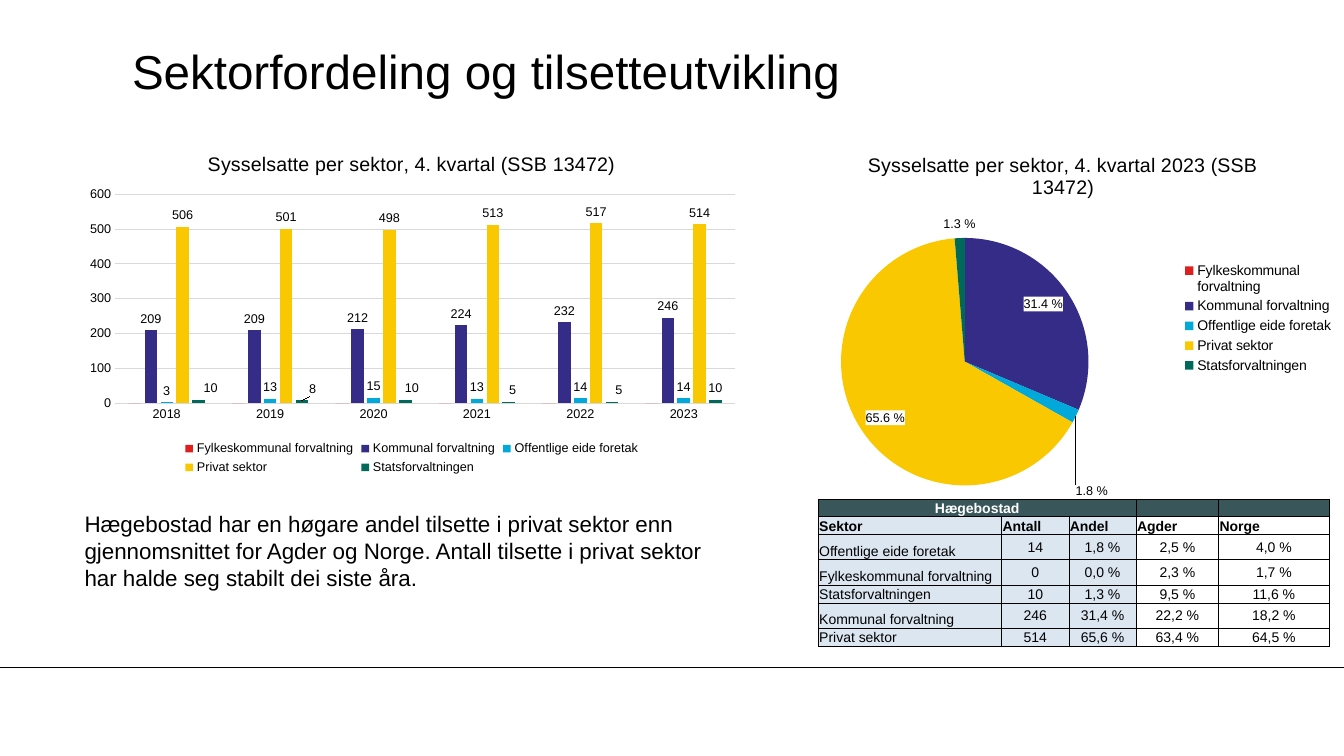
from dataclasses import dataclass

from lxml import etree
from pptx import Presentation
from pptx.chart.data import CategoryChartData
from pptx.dml.color import RGBColor
from pptx.enum import chart as ch, shapes, text
from pptx.oxml import ns, parse_xml
from pptx.util import Pt


@dataclass(frozen=True)
class Theme:
    """Colours and type sizes of the slide."""
    font: str = "Arial"
    black: str = "000000"
    white: str = "FFFFFF"
    grid: str = "D9D9D9"
    header: str = "39575B"
    tint: str = "DCE6F1"
    sectors: tuple = ("DF1F1D", "342C86", "00A9DA", "FAC800", "00695A")
    title: int = 34
    body: int = 16
    chart_title: int = 14
    cell: int = 10
    label: int = 9


THEME = Theme()
FMT_COUNT = "#,##0"
FMT_SHARE = '0.0" %";;'
SECTORS = ("Fylkeskommunal forvaltning", "Kommunal forvaltning",
           "Offentlige eide foretak", "Privat sektor", "Statsforvaltningen")
YEARS = ("2018", "2019", "2020", "2021", "2022", "2023")
EMPLOYED = ((0, 0, 0, 0, 0, 0), (209, 209, 212, 224, 232, 246),
            (3, 13, 15, 13, 14, 14), (506, 501, 498, 513, 517, 514),
            (10, 8, 10, 5, 5, 10))
SHARES = (0, 31.4, 1.8, 65.6, 1.3)
STATE_LABEL_SHIFTS = (0.018, 0.016, 0.01, 0.006, 0.01)
ROWS = (("Hægebostad", "", "", "", ""),
        ("Sektor", "Antall", "Andel", "Agder", "Norge"),
        ("Offentlige eide foretak", "14", "1,8 %", "2,5 %", "4,0 %"),
        ("Fylkeskommunal forvaltning", "0", "0,0 %", "2,3 %", "1,7 %"),
        ("Statsforvaltningen", "10", "1,3 %", "9,5 %", "11,6 %"),
        ("Kommunal forvaltning", "246", "31,4 %", "22,2 %", "18,2 %"),
        ("Privat sektor", "514", "65,6 %", "63,4 %", "64,5 %"))
COL_WIDTHS = (131, 48, 48, 59, 79)
SHORT_ROW, TALL_ROW = 12.5, 18
TALL_ROWS = (2, 3, 5)


def rgb(value):
    """Turn a hex string into a colour."""
    return RGBColor.from_string(value)


def style_font(font, size, color=THEME.black, bold=False):
    """Apply the theme font with a size and colour."""
    font.name, font.size, font.bold = THEME.font, Pt(size), bold
    font.color.rgb = rgb(color)


def style_runs(tf, size, color=THEME.black, bold=False):
    """Format every run in a text frame."""
    for p in tf.paragraphs:
        for r in p.runs:
            style_font(r.font, size, color, bold)


def add_title(s, content):
    """Fill and place the title placeholder."""
    sp = s.shapes.title
    sp.left, sp.top, sp.width, sp.height = Pt(94.3), Pt(23), Pt(799), Pt(54)
    tf = sp.text_frame
    tf.text = content
    tf.vertical_anchor = text.MSO_ANCHOR.MIDDLE
    tf.margin_left = tf.margin_top = tf.margin_right = tf.margin_bottom = 0
    tf.paragraphs[0].alignment = text.PP_ALIGN.LEFT
    style_runs(tf, THEME.title)


def add_comment(s, content):
    """Add the wrapped text below the column chart."""
    tf = s.shapes.add_textbox(Pt(53.3), Pt(360.7), Pt(461.5), Pt(65.5)).text_frame
    tf.word_wrap = True
    tf.text = content
    style_runs(tf, THEME.body)


def add_rule(s, y, width):
    """Draw the thin horizontal footer line."""
    line = s.shapes.add_connector(shapes.MSO_CONNECTOR.STRAIGHT, 0, Pt(y), width, Pt(y))
    line.line.color.rgb = rgb(THEME.black)
    line.line.width = Pt(0.75)
    etree.SubElement(line._element.spPr, ns.qn("a:effectLst"))


def layout(**values):
    """Build a manual chart layout from fractions of the chart."""
    inner = '<c:layoutTarget val="inner"/>' if "w" in values else ""
    modes = "".join(f'<c:{k}Mode val="edge"/>' for k in "xy") if inner else ""
    sizes = "".join(f'<c:{k} val="{v}"/>' for k, v in values.items())
    return parse_xml(f'<c:layout {ns.nsdecls("c")}><c:manualLayout>'
                     f'{inner}{modes}{sizes}</c:manualLayout></c:layout>')


def add_chart(s, kind, box, data, title, legend_at, legend_size, plot_box):
    """Add a chart with title, legend and fixed plot area."""
    chart = s.shapes.add_chart(kind, *map(Pt, box), data).chart
    style_font(chart.font, THEME.cell)
    chart.has_title = True
    chart.chart_title.text_frame.text = title
    style_runs(chart.chart_title.text_frame, THEME.chart_title)
    chart.has_legend = True
    chart.legend.position = legend_at
    chart.legend.include_in_layout = False
    style_font(chart.legend.font, legend_size)
    area = chart._chartSpace.chart.plotArea
    for old in area.findall(ns.qn("c:layout")):
        area.remove(old)
    area.insert(0, layout(**dict(zip("xywh", plot_box))))
    return chart


def show_labels(series, fmt, position):
    """Show the values of a series."""
    labels = series.data_labels
    labels.show_value = True
    labels.number_format, labels.number_format_is_linked = fmt, False
    labels.position = position
    style_font(labels.font, THEME.label)
    return labels


def move_label(point, fmt, dx=0, dy=0):
    """Put one label outside its point, shifted by chart fractions."""
    label = point.data_label
    style_font(label.font, THEME.label)
    label.position = ch.XL_LABEL_POSITION.OUTSIDE_END
    element = label._get_or_add_dLbl()
    number = element.makeelement(ns.qn("c:numFmt"), {"formatCode": fmt, "sourceLinked": "0"})
    element.insert(1, number)
    if dx or dy:
        element.insert(1, layout(x=dx, y=dy))


def style_axes(chart):
    """Format both axes of the column chart."""
    for axis in (chart.category_axis, chart.value_axis):
        axis.major_tick_mark = axis.minor_tick_mark = ch.XL_TICK_MARK.NONE
        style_font(axis.tick_labels.font, THEME.label)
    grid = chart.value_axis.major_gridlines.format.line
    for line in (chart.category_axis.format.line, grid):
        line.color.rgb = rgb(THEME.grid)
        line.width = Pt(0.75)
    values = chart.value_axis
    values.format.line.fill.background()
    values.minimum_scale, values.maximum_scale, values.major_unit = 0, 600, 100
    values.tick_labels.number_format = FMT_COUNT
    values.tick_labels.number_format_is_linked = False


def add_sector_columns(s):
    """Add the yearly column chart."""
    data = CategoryChartData(number_format=FMT_COUNT)
    data.categories = YEARS
    for name, values in zip(SECTORS, EMPLOYED):
        data.add_series(name, values)
    chart = add_chart(s, ch.XL_CHART_TYPE.COLUMN_CLUSTERED, (53.3, 97.2, 481.7, 244.8), data,
                      "Sysselsatte per sektor, 4. kvartal (SSB 13472)",
                      ch.XL_LEGEND_POSITION.BOTTOM, THEME.label, (0.06, 0.17, 0.92, 0.61))
    style_axes(chart)
    plot = chart.plots[0]
    plot.gap_width, plot.overlap, plot.vary_by_categories = 219, -27, False
    for series, color in zip(plot.series, THEME.sectors):
        series.format.fill.solid()
        series.format.fill.fore_color.rgb = rgb(color)
        if any(series.values):
            show_labels(series, FMT_COUNT, ch.XL_LABEL_POSITION.OUTSIDE_END)
    for i, dx in enumerate(STATE_LABEL_SHIFTS):
        move_label(plot.series[-1].points[i], FMT_COUNT, dx)


def add_sector_pie(s):
    """Add the pie chart of sector shares."""
    data = CategoryChartData(number_format="0.0")
    data.categories = SECTORS
    data.add_series("Series 1", SHARES)
    chart = add_chart(s, ch.XL_CHART_TYPE.PIE, (558.7, 97.2, 401.3, 260), data,
                      "Sysselsatte per sektor, 4. kvartal 2023 (SSB 13472)",
                      ch.XL_LEGEND_POSITION.RIGHT, THEME.cell, (0.1, 0.28, 0.45, 0.68))
    chart.plots[0].vary_by_categories = True
    series = chart.plots[0].series[0]
    for i, color in enumerate(THEME.sectors):
        fill = series.points[i].format.fill
        fill.solid()
        fill.fore_color.rgb = rgb(color)
    labels = show_labels(series, FMT_SHARE, ch.XL_LABEL_POSITION.INSIDE_END)
    backing = parse_xml(f'<c:spPr {ns.nsdecls("c", "a")}><a:solidFill>'
                        f'<a:srgbClr val="{THEME.white}"/></a:solidFill></c:spPr>')
    labels._element.find(ns.qn("c:txPr")).addprevious(backing)
    move_label(series.points[2], FMT_SHARE, -0.01, 0.18)
    move_label(series.points[4], FMT_SHARE)


def style_cell(cell, row, col):
    """Format one table cell by its row and column."""
    cell.margin_left = cell.margin_right = cell.margin_top = Pt(0.7)
    cell.margin_bottom = 0
    centred = row == 0 or (row > 1 and col > 0)
    middle = row > 1 and col > 0
    cell.vertical_anchor = text.MSO_ANCHOR.MIDDLE if middle else text.MSO_ANCHOR.BOTTOM
    p = cell.text_frame.paragraphs[0]
    p.alignment = text.PP_ALIGN.CENTER if centred else text.PP_ALIGN.LEFT
    if not p.runs:
        etree.SubElement(p._p, ns.qn("a:endParaRPr"), sz=str(THEME.cell * 100))
    style_runs(cell.text_frame, THEME.cell, THEME.black if row else THEME.white, row < 2)
    props = cell._tc.get_or_add_tcPr()
    for side in ("lnL", "lnR", "lnT", "lnB"):
        props.append(parse_xml(f'<a:{side} {ns.nsdecls("a")} w="6350"><a:solidFill>'
                               f'<a:srgbClr val="{THEME.black}"/></a:solidFill></a:{side}>'))
    if row and col > 2:
        cell.fill.background()
    else:
        cell.fill.solid()
        cell.fill.fore_color.rgb = rgb(THEME.tint if row else THEME.header)


def add_sector_table(s):
    """Add the comparison table."""
    heights = [TALL_ROW if i in TALL_ROWS else SHORT_ROW for i in range(len(ROWS))]
    table = s.shapes.add_table(len(ROWS), len(COL_WIDTHS), Pt(584.5), Pt(356.4),
                               Pt(sum(COL_WIDTHS)), Pt(sum(heights))).table
    table.first_row = table.horz_banding = False
    for column, width in zip(table.columns, COL_WIDTHS):
        column.width = Pt(width)
    for i, values in enumerate(ROWS):
        table.rows[i].height = Pt(heights[i])
        for j, value in enumerate(values):
            table.cell(i, j).text = value
            style_cell(table.cell(i, j), i, j)
    table.cell(0, 0).merge(table.cell(0, 2))


def main():
    """Build and save the slide."""
    prs = Presentation()
    prs.slide_width, prs.slide_height = Pt(960), Pt(540)
    s = prs.slides.add_slide(prs.slide_layouts[5])
    add_rule(s, 476.6, prs.slide_width)
    add_title(s, "Sektorfordeling og tilsetteutvikling")
    add_comment(s, "Hægebostad har en høgare andel tilsette i privat sektor enn "
                   "gjennomsnittet for Agder og Norge. Antall tilsette i privat sektor "
                   "har halde seg stabilt dei siste åra.")
    add_sector_table(s)
    add_sector_columns(s)
    add_sector_pie(s)
    prs.save("out.pptx")


if __name__ == "__main__":
    main()
